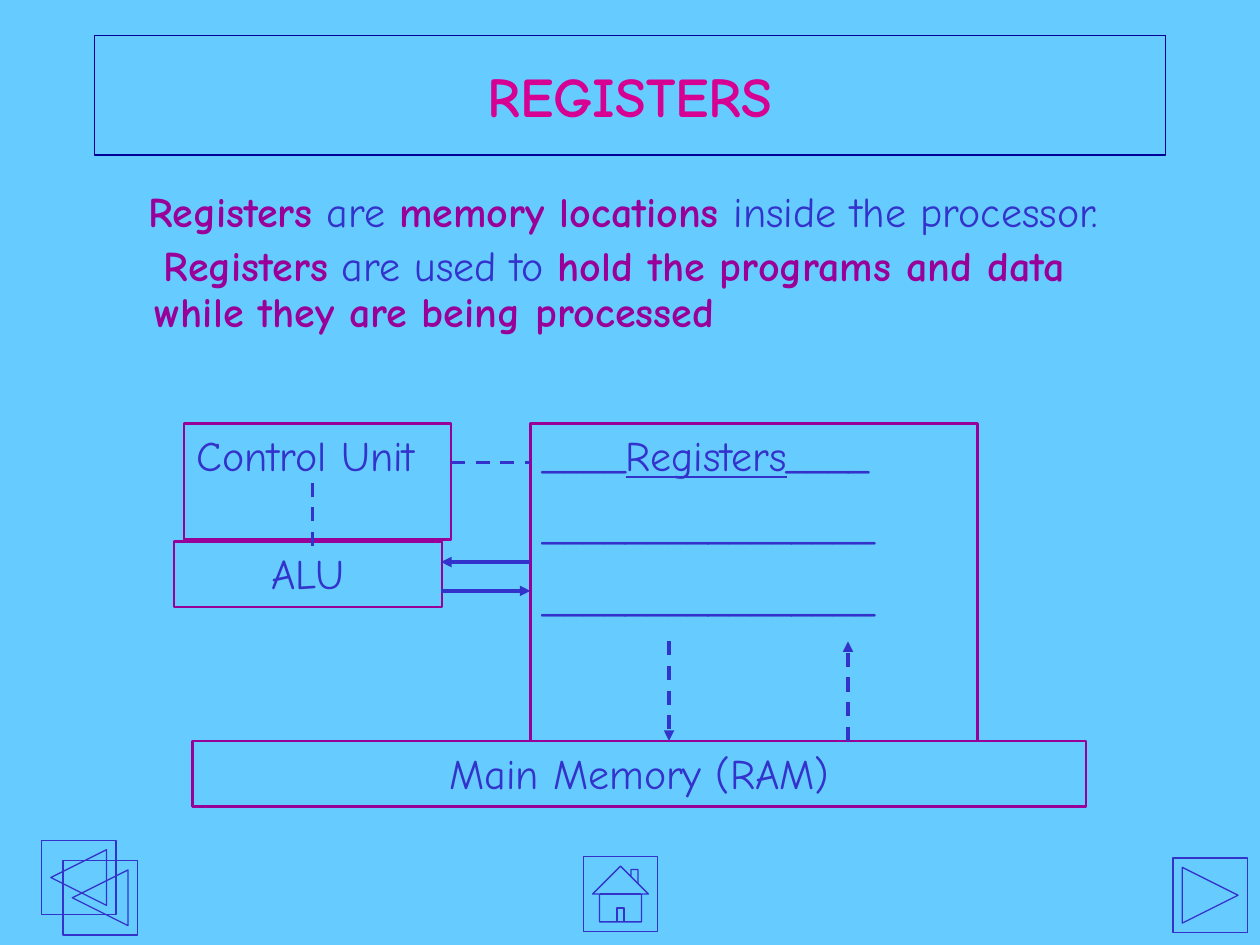
"""Build the slide on registers with its processor diagram."""
from typing import NamedTuple

from pptx import Presentation
from pptx.dml.color import RGBColor
from pptx.enum.dml import MSO_LINE
from pptx.enum.shapes import MSO_CONNECTOR, MSO_SHAPE as Preset
from pptx.enum.text import MSO_ANCHOR as Anchor, PP_ALIGN as Align
from pptx.oxml.ns import qn
from pptx.util import Inches, Pt
from lxml.etree import SubElement

COLORS = {"sky": "66CCFF", "navy": "000099", "pink": "D60093",
          "purple": "990099", "blue": "3333CC"}
FONT = "Comic Neue"
COLUMN, ROW = Inches(10) / 100, Inches(7.5) / 100


class Area(NamedTuple):
    """A rectangle in grid columns and rows."""
    column: float
    row: float
    columns: float
    rows: float


class Unit(NamedTuple):
    """A labelled block; each line is a list of (text, underlined) spans."""
    area: Area
    lines: list
    align: Align


class Wire(NamedTuple):
    """A straight link between two grid points."""
    start: tuple
    end: tuple
    dashed: bool
    arrow: bool


class Button(NamedTuple):
    """A square navigation button at a grid point."""
    preset: Preset
    column: float
    row: float


class Sentence(NamedTuple):
    """A body paragraph of (text, strong) spans with a first-line indent."""
    indent: float
    spans: list


TITLE_AREA = Area(7.5, 3.73, 85, 12.67)
BODY_AREA = Area(7.5, 19.6, 85, 23.07)
SENTENCES = [
    Sentence(-0.05, [("Registers", True), (" are ", False),
                     ("memory locations ", True),
                     ("inside the processor.", False)]),
    Sentence(0.07, [("Registers", True), (" are used to ", False),
                    ("hold the programs and data while they are being processed", True)]),
]
BLANK_LINE = [("_" * 16, False)]
UNITS = [
    Unit(Area(14.6, 44.8, 21.2, 12.27), [[("Control Unit", False)]], Align.LEFT),
    Unit(Area(13.8, 57.33, 21.3, 6.93), [[("ALU", False)]], Align.CENTER),
    Unit(Area(42.1, 44.8, 35.5, 33.6),
         [[("____", False), ("Registers", True), ("____", False)],
          BLANK_LINE, BLANK_LINE], Align.LEFT),
    Unit(Area(15.3, 78.4, 70.9, 6.93), [[("Main Memory (RAM)", False)]], Align.CENTER),
]
WIRES = [
    Wire((35.8, 48.93), (42.1, 48.93), True, False),
    Wire((24.8, 51.07), (24.8, 58.4), True, False),
    Wire((42.1, 59.47), (35, 59.47), False, True),
    Wire((35, 62.53), (42.1, 62.53), False, True),
    Wire((53.1, 67.87), (53.1, 78.4), True, True),
    Wire((67.3, 78.4), (67.3, 67.87), True, True),
]
BUTTONS = [
    Button(Preset.ACTION_BUTTON_HOME, 46.3, 90.67),
    Button(Preset.ACTION_BUTTON_FORWARD_OR_NEXT, 93.1, 90.8),
    Button(Preset.ACTION_BUTTON_BACK_OR_PREVIOUS, 3.3, 88.93),
    Button(Preset.ACTION_BUTTON_BACK_OR_PREVIOUS, 5, 91.07),
]


def color(name: str) -> RGBColor:
    """Look up a named colour."""
    return RGBColor.from_string(COLORS[name])


def frame(area: Area) -> tuple:
    """Turn a grid area into left, top, width and height."""
    return (round(area.column * COLUMN), round(area.row * ROW),
            round(area.columns * COLUMN), round(area.rows * ROW))


def style_line(line, name: str, width: float) -> None:
    """Give a line its colour and width."""
    line.color.rgb = color(name)
    line.width = Pt(width)


def style_font(font, name: str, size: float = 24, bold: bool = False) -> None:
    """Give a font its face, size, colour and weight."""
    font.name, font.size, font.bold = FONT, Pt(size), bold
    font.color.rgb = color(name)


def add_span(para, text: str, name: str, bold: bool = False):
    """Append a styled run to a paragraph."""
    span = para.add_run()
    span.text = text
    style_font(span.font, name, bold=bold)
    return span


def next_para(text_frame, index: int, gap: float):
    """Return the first paragraph, or a new one with space before it."""
    if index == 0:
        return text_frame.paragraphs[0]
    para = text_frame.add_paragraph()
    para.space_before = Pt(gap)
    return para


def draw_title(page) -> None:
    """Fill and place the title placeholder."""
    title = page.shapes.title
    title.left, title.top, title.width, title.height = frame(TITLE_AREA)
    style_line(title.line, "navy", 0.75)
    title.text_frame.text = "REGISTERS"
    title.text_frame.vertical_anchor = Anchor.MIDDLE
    para = title.text_frame.paragraphs[0]
    para.alignment = Align.CENTER
    style_font(para.runs[0].font, "pink", 32, True)


def draw_body(page) -> None:
    """Write the explanatory sentences."""
    box = page.shapes.add_textbox(*frame(BODY_AREA))
    box.text_frame.word_wrap = True
    for index, sentence in enumerate(SENTENCES):
        para = next_para(box.text_frame, index, 5)
        para.line_spacing = 0.9
        properties = para._p.get_or_add_pPr()
        properties.set("marL", str(Inches(0.38)))
        properties.set("indent", str(Inches(sentence.indent)))
        for text, strong in sentence.spans:
            add_span(para, text, "purple" if strong else "blue", strong)


def draw_outline(page, preset: Preset, area: Area, name: str, width: float):
    """Draw an unfilled preset shape."""
    shape = page.shapes.add_shape(preset, *frame(area))
    shape.shadow.inherit = False
    shape.fill.background()
    style_line(shape.line, name, width)
    return shape


def draw_unit(page, unit: Unit) -> None:
    """Draw a block of the diagram with its label."""
    box = draw_outline(page, Preset.RECTANGLE, unit.area, "purple", 1.5)
    box.text_frame.word_wrap = True
    box.text_frame.vertical_anchor = Anchor.TOP
    for index, spans in enumerate(unit.lines):
        para = next_para(box.text_frame, index, 12)
        para.alignment = unit.align
        for text, underlined in spans:
            add_span(para, text, "blue").font.underline = underlined


def draw_wire(page, wire: Wire) -> None:
    """Draw a link, dashed or with an arrowhead where asked."""
    left, top, _, _ = frame(Area(*wire.start, 0, 0))
    right, bottom, _, _ = frame(Area(*wire.end, 0, 0))
    link = page.shapes.add_connector(MSO_CONNECTOR.STRAIGHT, left, top, right, bottom)
    style_line(link.line, "blue", 2)
    if wire.dashed:
        link.line.dash_style = MSO_LINE.DASH
    if wire.arrow:
        SubElement(link.line._get_or_add_ln(), qn("a:tailEnd"), type="triangle")
    SubElement(link._element.spPr, qn("a:effectLst"))


def main() -> None:
    """Build and save the deck."""
    deck = Presentation()
    deck.slide_width, deck.slide_height = Inches(10), Inches(7.5)
    page = deck.slides.add_slide(deck.slide_layouts[5])
    page.background.fill.solid()
    page.background.fill.fore_color.rgb = color("sky")
    draw_title(page)
    draw_body(page)
    for unit in UNITS:
        draw_unit(page, unit)
    for wire in WIRES:
        draw_wire(page, wire)
    for button in BUTTONS:
        area = Area(button.column, button.row, 5.9, 7.87)
        draw_outline(page, button.preset, area, "blue", 0.75)
    deck.save("out.pptx")


if __name__ == "__main__":
    main()
